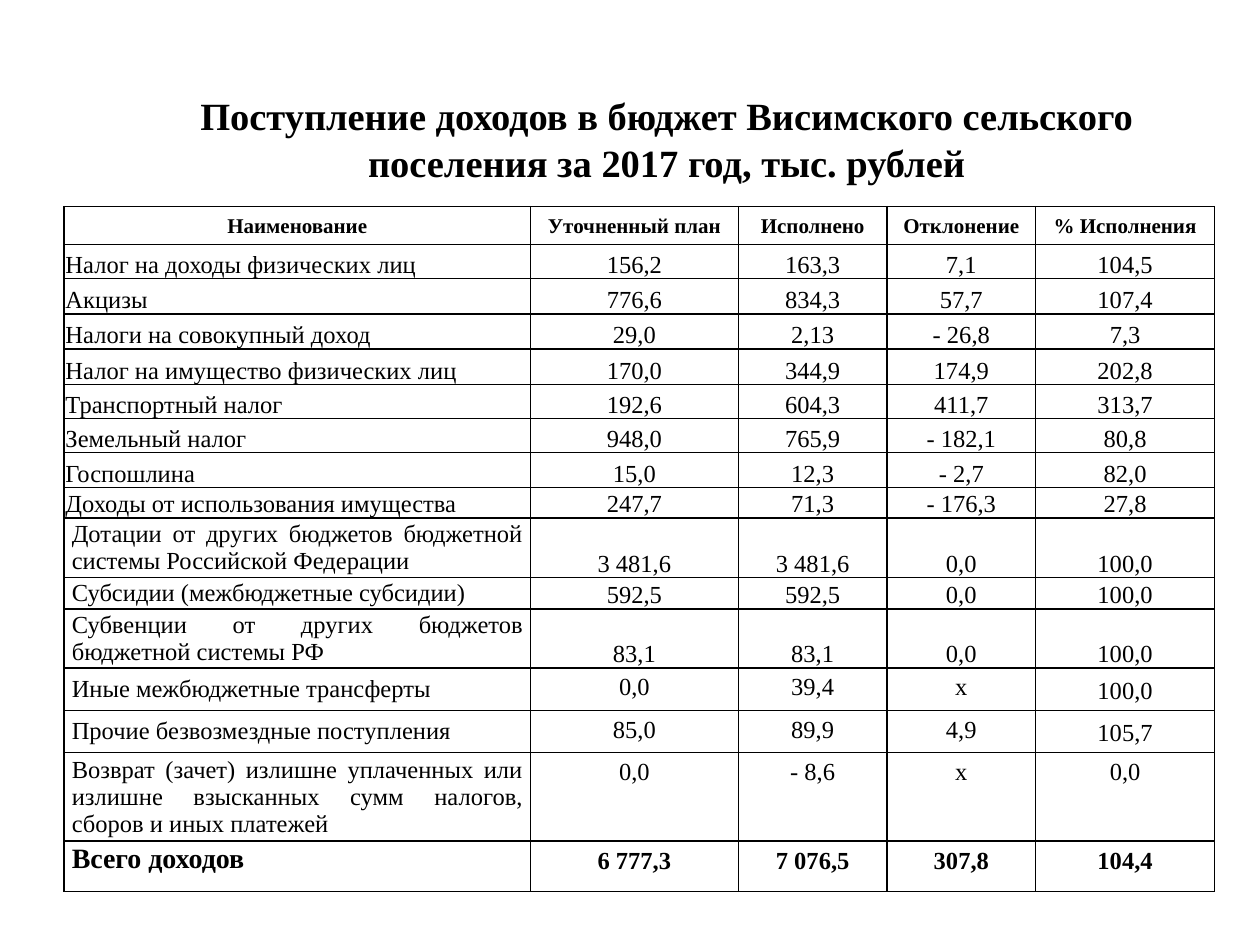
from lxml.etree import SubElement
from pptx import Presentation
from pptx.dml.color import RGBColor
from pptx.enum.text import MSO_ANCHOR, PP_ALIGN
from pptx.oxml.ns import qn
from pptx.util import Inches, Pt

BLACK = RGBColor(0, 0, 0)
FONT = "Times New Roman"
WIDTHS = [3.7, 1.65, 1.18, 1.18, 1.42]
HEIGHTS = [0.3, 0.27, 0.28, 0.28, 0.28, 0.27, 0.27, 0.28,
           0.24, 0.47, 0.25, 0.46, 0.34, 0.33, 0.7, 0.4]
TIGHT = (0.01, 0.01, 0.01, 0)
LABEL = (0.06, 0, 0.06, 0)
TOTAL = (0.06, 0, 0.06, 0.12)
WIDE = (0.1, 0.05, 0.1, 0.05)
HEADS = ["Наименование", "Уточненный план", "Исполнено", "Отклонение", "% Исполнения"]
TAXES = [
    ["Налог на доходы физических лиц", "156,2", "163,3", "7,1", "104,5"],
    ["Акцизы", "776,6", "834,3", "57,7", "107,4"],
    ["Налоги на совокупный доход", "29,0", "2,13", "- 26,8", "7,3"],
    ["Налог на имущество физических лиц", "170,0", "344,9", "174,9", "202,8"],
    ["Транспортный налог", "192,6", "604,3", "411,7", "313,7"],
    ["Земельный налог", "948,0", "765,9", "- 182,1", "80,8"],
    ["Госпошлина", "15,0", "12,3", "- 2,7", "82,0"],
    ["Доходы от использования имущества", "247,7", "71,3", "- 176,3", "27,8"],
]
GRANTS = [
    ["Дотации от других бюджетов бюджетной системы Российской Федерации",
     "3 481,6", "3 481,6", "0,0", "100,0"],
    ["Субсидии (межбюджетные субсидии)", "592,5", "592,5", "0,0", "100,0"],
    ["Субвенции от других бюджетов бюджетной системы РФ",
     "83,1", "83,1", "0,0", "100,0"],
]
OTHERS = [
    ["Иные межбюджетные трансферты", "0,0", "39,4", "х", "100,0"],
    ["Прочие безвозмездные поступления", "85,0", "89,9", "4,9", "105,7"],
]
REFUND = ["Возврат (зачет) излишне уплаченных или излишне взысканных сумм налогов, "
          "сборов и иных платежей", "0,0", "- 8,6", "х", "0,0"]
SUMS = ["Всего доходов", "6 777,3", "7 076,5", "307,8", "104,4"]


def write(frame, text, size, bold=False, align=PP_ALIGN.CENTER):
    """Put one styled paragraph into a text frame."""
    frame.text = text
    para = frame.paragraphs[0]
    para.alignment = align
    font = para.runs[0].font
    font.name, font.size, font.bold = FONT, Pt(size), bold
    font.color.rgb = BLACK


def border(cell):
    """Draw a thin black line on all four sides of a cell."""
    props = cell._tc.get_or_add_tcPr()
    for side in ("a:lnL", "a:lnR", "a:lnT", "a:lnB"):
        line = SubElement(props, qn(side), w=str(Pt(1)))
        fill = SubElement(line, qn("a:solidFill"))
        SubElement(fill, qn("a:srgbClr"), val=str(BLACK))


def style(cell, anchor, inset):
    """Set the anchor, insets, borders and empty fill of a cell."""
    cell.vertical_anchor = anchor
    left, top, right, bottom = map(Inches, inset)
    cell.margin_left, cell.margin_top = left, top
    cell.margin_right, cell.margin_bottom = right, bottom
    border(cell)
    cell.fill.background()


def add_title(slide):
    """Add the centred heading."""
    box = slide.shapes.add_textbox(Inches(0.78), Inches(0.68), Inches(9.02), Inches(0.84))
    frame = box.text_frame
    frame.word_wrap = True
    frame.vertical_anchor = MSO_ANCHOR.MIDDLE
    write(frame, "Поступление доходов в бюджет Висимского сельского "
          "поселения за 2017 год, тыс. рублей", 22, True)


def add_grid(slide):
    """Add the empty income table and return it."""
    grid = slide.shapes.add_table(
        len(HEIGHTS), len(WIDTHS), Inches(0.51), Inches(1.64),
        Inches(sum(WIDTHS)), Inches(sum(HEIGHTS))).table
    grid.first_row = grid.horz_banding = False
    for col, width in zip(grid.columns, WIDTHS):
        col.width = Inches(width)
    for row, height in zip(grid.rows, HEIGHTS):
        row.height = Inches(height)
    return grid


def fill_row(row, texts, label, value, last=None):
    """Fill a row; each look is (anchor, inset, size, bold, align)."""
    looks = [label] + [value] * 3 + [last or value]
    for cell, text, look in zip(row.cells, texts, looks):
        anchor, inset, *font = look
        write(cell.text_frame, text, *font)
        style(cell, anchor, inset)


def main():
    """Build and save the slide."""
    deck = Presentation()
    deck.slide_width, deck.slide_height = Inches(10), Inches(7.5)
    slide = deck.slides.add_slide(deck.slide_layouts[6])
    add_title(slide)

    top, middle, bottom = MSO_ANCHOR.TOP, MSO_ANCHOR.MIDDLE, MSO_ANCHOR.BOTTOM
    head = (bottom, WIDE, 12, True)
    tax = (bottom, TIGHT, 14, False, PP_ALIGN.LEFT)
    grant = (middle, LABEL, 14, False, PP_ALIGN.JUSTIFY)
    total = (middle, TOTAL, 16, True, PP_ALIGN.LEFT)
    low, high = (bottom, TIGHT, 14), (top, WIDE, 14)

    rows = [(HEADS, head, head)]
    rows += [(texts, tax, low) for texts in TAXES]
    rows += [(texts, grant, low) for texts in GRANTS]
    rows += [(texts, grant, high, (bottom, WIDE, 14)) for texts in OTHERS]
    rows += [(REFUND, grant, high), (SUMS, total, (top, WIDE, 14, True))]
    for row, parts in zip(add_grid(slide).rows, rows):
        fill_row(row, *parts)
    deck.save("out.pptx")


if __name__ == "__main__":
    main()
